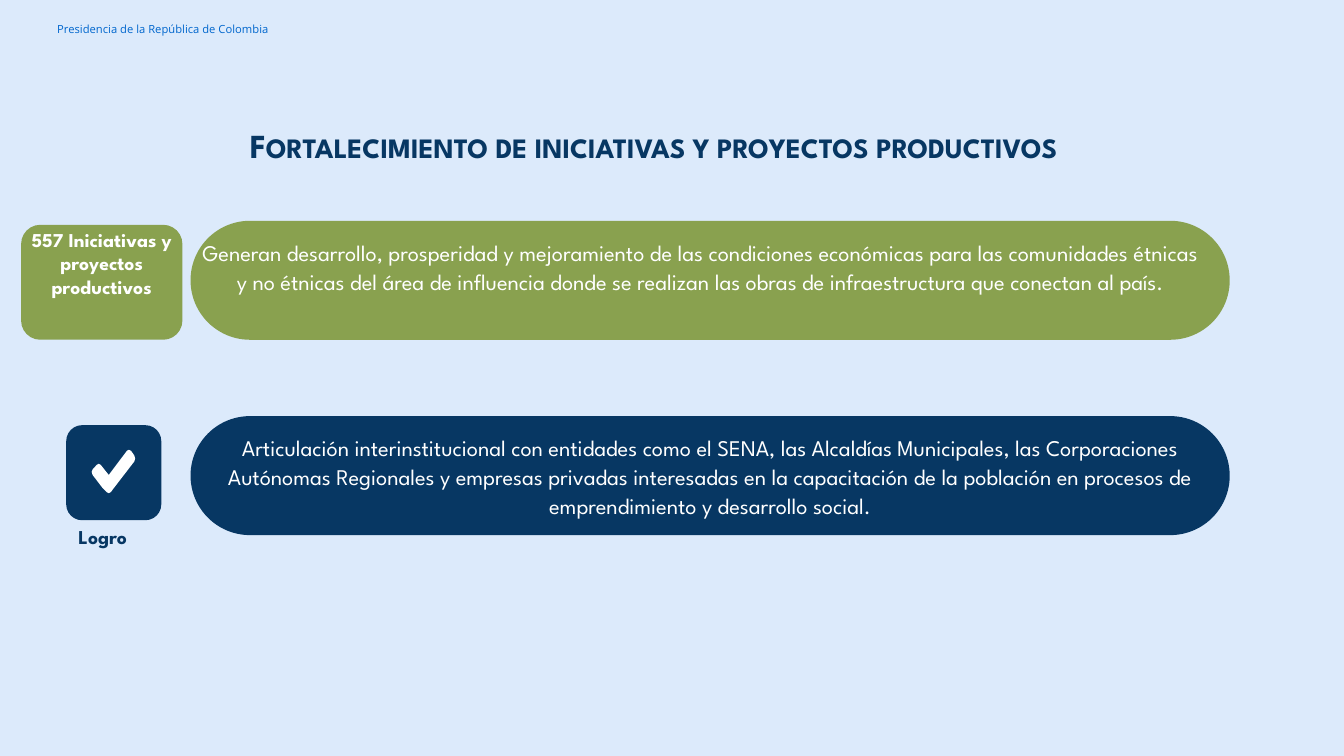
from pptx import Presentation
from pptx.dml.color import RGBColor
from pptx.enum.shapes import MSO_SHAPE
from pptx.enum.text import MSO_ANCHOR, MSO_AUTO_SIZE, PP_ALIGN
from pptx.util import Pt

ROUND = MSO_SHAPE.ROUNDED_RECTANGLE
TOP, MIDDLE = MSO_ANCHOR.TOP, MSO_ANCHOR.MIDDLE
LEFT, CENTER = PP_ALIGN.LEFT, PP_ALIGN.CENTER
FIXED = MSO_AUTO_SIZE.NONE

PALE = RGBColor(0xDC, 0xEA, 0xFB)
BLUE = RGBColor(0x00, 0x66, 0xCD)
NAVY = RGBColor(0x07, 0x37, 0x63)
GREEN = RGBColor(0x89, 0xA1, 0x4F)
WHITE = RGBColor(0xFF, 0xFF, 0xFF)

HEAD = "Presidencia de la República de Colombia"
TITLE = [("F", 24), ("ORTALECIMIENTO DE INICIATIVAS Y PROYECTOS PRODUCTIVOS", 20)]
COUNT = "557 Iniciativas y proyectos productivos"
GOAL = "Logro"
ROWS = [
    (157.7, GREEN, 728.6,
     "Generan desarrollo, prosperidad y mejoramiento de las condiciones "
     "económicas para las comunidades étnicas y no étnicas del área de "
     "influencia donde se realizan las obras de infraestructura que conectan "
     "al país."),
    (297.2, NAVY, 742.3,
     "Articulación interinstitucional con entidades como el SENA, las "
     "Alcaldías Municipales, las Corporaciones Autónomas Regionales y "
     "empresas privadas interesadas en la capacitación de la población en "
     "procesos de emprendimiento y desarrollo social."),
]
BADGES = [
    ((15.1, 160.6, 115.2, 82.1), GREEN),
    ((47.3, 303.7, 67.9, 67.9), NAVY),
]
TICK = [
    (26.6, 0), (28.1, 0.7), (30.5, 4.1), (31, 6.3), (30.5, 8.3),
    (15.8, 27.4), (13.7, 30.2), (12.2, 31), (10.7, 30.2), (7.9, 27.4),
    (0.7, 18), (0, 15.8), (0.7, 14), (3.6, 10.8), (5, 10), (6.5, 10.8),
    (12.2, 18), (25.2, 0.7),
]
TICK_X, TICK_Y = 65.5, 321.3
PILL_X, PILL_W, PILL_H = 136.1, 742.3, 85

deck = Presentation()
deck.slide_width, deck.slide_height = Pt(960), Pt(540)
slide = deck.slides.add_slide(deck.slide_layouts[5])
slide.background.fill.solid()
slide.background.fill.fore_color.rgb = PALE
shapes = slide.shapes


def place(box):
    return [Pt(n) for n in box]


def paint(shape, color):
    shape.shadow.inherit = False
    shape.fill.solid()
    shape.fill.fore_color.rgb = color
    shape.line.fill.background()


def block(box, color, round_by):
    shape = shapes.add_shape(ROUND, *place(box))
    shape.adjustments[0] = round_by
    paint(shape, color)


def write(text, box, size=14, color=WHITE, font="League Spartan", bold=False,
          align=CENTER, anchor=TOP, wrap=True, lines=None, after=0, holder=None):
    shape = holder or shapes.add_textbox(*place(box))
    shape.left, shape.top, shape.width, shape.height = place(box)
    frame = shape.text_frame
    frame.auto_size = FIXED
    frame.word_wrap = wrap
    frame.vertical_anchor = anchor
    para = frame.paragraphs[0]
    para.alignment = align
    para.space_after = Pt(after)
    if lines:
        para.line_spacing = lines
    runs = [(text, size)] if isinstance(text, str) else text
    for part, points in runs:
        run = para.add_run()
        run.text = part
        run.font.name = font
        run.font.size = Pt(points)
        run.font.bold = bold
        run.font.color.rgb = color


write(HEAD, (33.8, 11.5, 194.4, 18.7), size=8, color=BLUE, font="Open Sans",
      align=LEFT, anchor=MIDDLE)
write(TITLE, (-13, 85.7, 960, 54), color=NAVY, bold=True, holder=shapes.title)

for top, color, width, text in ROWS:
    block((PILL_X, top, PILL_W, PILL_H), color, 0.5)
    write(text, (PILL_X, top + 8.3, width, 67.7), size=16, lines=1.07, after=8)

for box, color in BADGES:
    block(box, color, 0.167)

pen = shapes.build_freeform(Pt(TICK[0][0]), Pt(TICK[0][1]))
pen.add_line_segments([place(dot) for dot in TICK[1:]], close=True)
paint(pen.convert_to_shape(Pt(TICK_X), Pt(TICK_Y)), WHITE)

write(GOAL, (49, 371.5, 52.6, 24.5), color=NAVY, bold=True, align=LEFT, wrap=False)
write(COUNT, (15.1, 159.1, 115.2, 58.3), bold=True)

deck.save("out.pptx")
